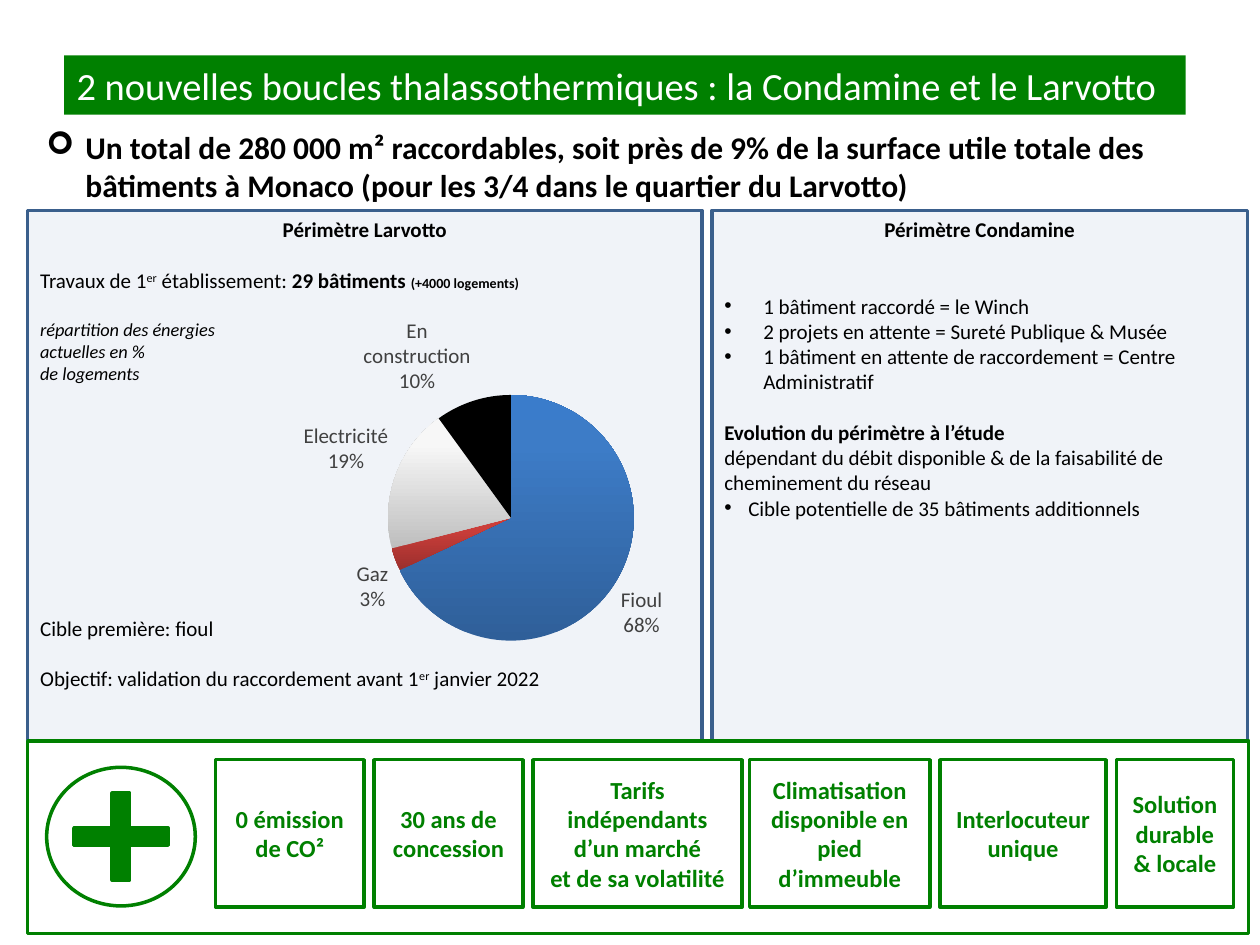
from lxml import etree
from pptx import Presentation
from pptx.chart.data import CategoryChartData
from pptx.dml.color import RGBColor
from pptx.enum.chart import XL_CHART_TYPE, XL_LABEL_POSITION
from pptx.enum.shapes import MSO_SHAPE
from pptx.enum.text import MSO_ANCHOR, PP_ALIGN
from pptx.oxml import parse_xml
from pptx.oxml.ns import nsdecls, qn
from pptx.util import Inches, Pt

COLORS = {
    "green": "008000", "white": "FFFFFF", "black": "000000",
    "panel": "F0F3F8", "border": "3A5F8C", "label": "404040",
}
FONT = "Calibri"
LINE = 14.65  # height of one 12 pt line, in points

LARVOTTO = [
    dict(runs=[("Périmètre Larvotto", dict(bold=True))], align=PP_ALIGN.CENTER),
    dict(runs=[("Travaux de 1", {}), ("er", dict(raised=True)), (" établissement: ", {}),
               ("29 bâtiments ", dict(bold=True)),
               ("(+4000 logements)", dict(bold=True, size=8))], before=LINE),
    dict(runs=[("répartition des énergies", dict(italic=True, size=10.5))], before=LINE),
    dict(runs=[("actuelles en %", dict(italic=True, size=10.5))]),
    dict(runs=[("de logements", dict(italic=True, size=10.5))]),
    dict(runs=[("Cible première: fioul", {})], before=9 * LINE),
    dict(runs=[("Objectif: validation du raccordement avant 1", {}),
               ("er", dict(raised=True)), (" janvier 2022", {})], before=LINE),
]
CONDAMINE = [
    dict(runs=[("Périmètre Condamine", dict(bold=True))], align=PP_ALIGN.CENTER),
    dict(runs=[("1 bâtiment raccordé = le Winch", {})],
         before=2 * LINE, bullet="•", indent=0.31),
    dict(runs=[("2 projets en attente = Sureté Publique & Musée", {})],
         bullet="•", indent=0.31),
    dict(runs=[("1 bâtiment en attente de raccordement = Centre Administratif", {})],
         bullet="•", indent=0.31),
    dict(runs=[("Evolution du périmètre à l’étude", dict(bold=True))], before=LINE),
    dict(runs=[("dépendant du débit disponible & de la faisabilité de "
                "cheminement du réseau", {})]),
    dict(runs=[("Cible potentielle de 35 bâtiments additionnels", {})],
         bullet="•", indent=0.19),
]
# left, width, lines of text
BENEFITS = [
    (1.71, 1.18, ["0 émission de CO²"]),
    (2.97, 1.18, ["30 ans de concession"]),
    (4.23, 1.66, ["Tarifs indépendants d’un marché", "et de sa volatilité"]),
    (5.95, 1.43, ["Climatisation disponible en pied d’immeuble"]),
    (7.46, 1.32, ["Interlocuteur unique"]),
    (8.86, 0.93, ["Solution durable & locale"]),
]
# category, percentage, gradient stops from bottom to top (None: plain black)
ENERGIES = [
    ("Fioul", 68, ["2F5F99", "3D7CC7", "3A7CCB"]),
    ("Gaz", 3, ["9C2F2D", "CB3E3A", "CE3B37"]),
    ("Electricité", 19, ["BEBEBE", "F7F7F7", "F8F8F8"]),
    ("En construction", 10, None),
]


def rgb(name):
    return RGBColor.from_string(COLORS[name])


def add_box(shapes, place, fill, border=None, kind=MSO_SHAPE.RECTANGLE):
    box = shapes.add_shape(kind, *map(Inches, place))
    box.shadow.inherit = False
    box.fill.solid()
    box.fill.fore_color.rgb = rgb(fill)
    if border:
        box.line.color.rgb = rgb(border)
        box.line.width = Pt(2)
    else:
        box.line.fill.background()
    return box


def add_bullet(para, mark, indent):
    properties = para._p.get_or_add_pPr()
    properties.set("marL", str(Inches(indent)))
    properties.set("indent", str(-Inches(indent)))
    font = etree.SubElement(properties, qn("a:buFont"))
    font.set("typeface", "Arial" if mark == "•" else "Wingdings")
    etree.SubElement(properties, qn("a:buChar")).set("char", mark)


def add_run(para, text, size, color, bold=False, italic=False, raised=False):
    span = para.add_run()
    span.text = text
    span.font.name = FONT
    span.font.size = Pt(size)
    span.font.color.rgb = rgb(color)
    span.font.bold = bold
    span.font.italic = italic
    if raised:
        span.font._element.set("baseline", "30000")


def write_text(box, paragraphs, size=12, color="black", anchor=MSO_ANCHOR.TOP):
    frame = box.text_frame
    frame.word_wrap = True
    frame.vertical_anchor = anchor
    for number, item in enumerate(paragraphs):
        para = frame.paragraphs[0] if number == 0 else frame.add_paragraph()
        para.alignment = item.get("align", PP_ALIGN.LEFT)
        if "before" in item:
            para.space_before = Pt(item["before"])
        if "bullet" in item:
            add_bullet(para, item["bullet"], item["indent"])
        for text, style in item["runs"]:
            add_run(para, text, **{"size": size, "color": color, **style})


def add_benefit(shapes, left, width, lines):
    box = add_box(shapes, (left, 6.03, width, 1.17), "white", "green")
    paragraphs = [dict(runs=[(line, dict(bold=True))], align=PP_ALIGN.CENTER)
                  for line in lines]
    write_text(box, paragraphs, 14, "green", MSO_ANCHOR.MIDDLE)


def fill_slice(point, stops):
    if stops is None:
        point.format.fill.solid()
        point.format.fill.fore_color.rgb = rgb("black")
        return
    marks = "".join(f'<a:gs pos="{position}"><a:srgbClr val="{color}"/></a:gs>'
                    for position, color in zip((0, 80000, 100000), stops))
    point.format.fill.background()
    properties = point._element.findall(".//" + qn("c:spPr"))[-1] \
        if point._element.tag == qn("c:dPt") else point.format.fill._xPr
    properties.replace(properties.find(qn("a:noFill")), parse_xml(
        f'<a:gradFill {nsdecls("a")} rotWithShape="1"><a:gsLst>{marks}</a:gsLst>'
        '<a:lin ang="16200000" scaled="0"/></a:gradFill>'))


def add_energy_chart(shapes):
    data = CategoryChartData()
    data.categories = [name for name, _, _ in ENERGIES]
    data.add_series("Series 1", [value for _, value, _ in ENERGIES])
    chart = shapes.add_chart(XL_CHART_TYPE.PIE, *map(Inches, (1.38, 2.37, 5, 3)), data).chart
    chart.has_legend = False
    chart.has_title = False
    chart.font.name = FONT
    chart.font.size = Pt(10)
    chart.font.color.rgb = rgb("black")
    plot = chart.plots[0]
    plot.vary_by_categories = True
    for number, (_, _, stops) in enumerate(ENERGIES):
        fill_slice(plot.series[0].points[number], stops)

    # Category and share on two lines outside each slice
    labels = plot.series[0].data_labels
    labels.show_category_name = True
    labels.show_percentage = True
    labels.show_value = False
    labels.position = XL_LABEL_POSITION.OUTSIDE_END
    labels.font.name = FONT
    labels.font.size = Pt(12)
    labels.font.color.rgb = rgb("label")
    separator = etree.Element(qn("c:separator"))
    separator.text = "\n"
    labels._element.find(qn("c:showBubbleSize")).addnext(separator)

    # Fixed place of the pie inside the chart
    area = plot._element.getparent()
    for old in area.findall(qn("c:layout")):
        area.remove(old)
    sizes = "".join(f'<c:{name} val="{value}"/>' for name, value in (
        ("x", 0.34), ("y", 0.25), ("w", 0.39), ("h", 0.66)))
    area.insert(0, parse_xml(
        f'<c:layout {nsdecls("c")}><c:manualLayout><c:layoutTarget val="inner"/>'
        f'<c:xMode val="edge"/><c:yMode val="edge"/>{sizes}</c:manualLayout></c:layout>'))


def main():
    deck = Presentation()
    deck.slide_width, deck.slide_height = Inches(10), Inches(7.5)
    page = deck.slides.add_slide(deck.slide_layouts[6])
    shapes = page.shapes

    # Two perimeter panels
    write_text(add_box(shapes, (0.22, 1.67, 5.35, 4.73), "panel", "border"), LARVOTTO)
    write_text(add_box(shapes, (5.65, 1.67, 4.25, 4.73), "panel", "border"), CONDAMINE)

    # Benefits band with its plus sign
    add_box(shapes, (0.22, 5.88, 9.69, 1.53), "white", "green")
    badge = shapes.add_group_shape().shapes
    add_box(badge, (0.37, 6.09, 1.18, 1.1), "white", "green", MSO_SHAPE.OVAL)
    plus = add_box(badge, (0.45, 6.17, 1.02, 0.94), "green", "green", MSO_SHAPE.MATH_PLUS)
    plus.adjustments[0] = 0.147
    for benefit in BENEFITS:
        add_benefit(shapes, *benefit)

    # Key message and title
    message = shapes.add_textbox(*map(Inches, (0.27, 0.97, 9.8, 0.71)))
    write_text(message, [dict(runs=[(
        "Un total de 280 000 m² raccordables, soit près de 9% de la surface utile totale "
        "des bâtiments à Monaco (pour les 3/4 dans le quartier du Larvotto)",
        dict(bold=True))], bullet="➢", indent=0.31)], 18)
    title = add_box(shapes, (0.51, 0.44, 8.9, 0.47), "green")
    write_text(title, [dict(runs=[(
        "2 nouvelles boucles thalassothermiques : la Condamine et le Larvotto", {})])],
        22, "white")

    add_energy_chart(shapes)
    deck.save("out.pptx")


if __name__ == "__main__":
    main()
